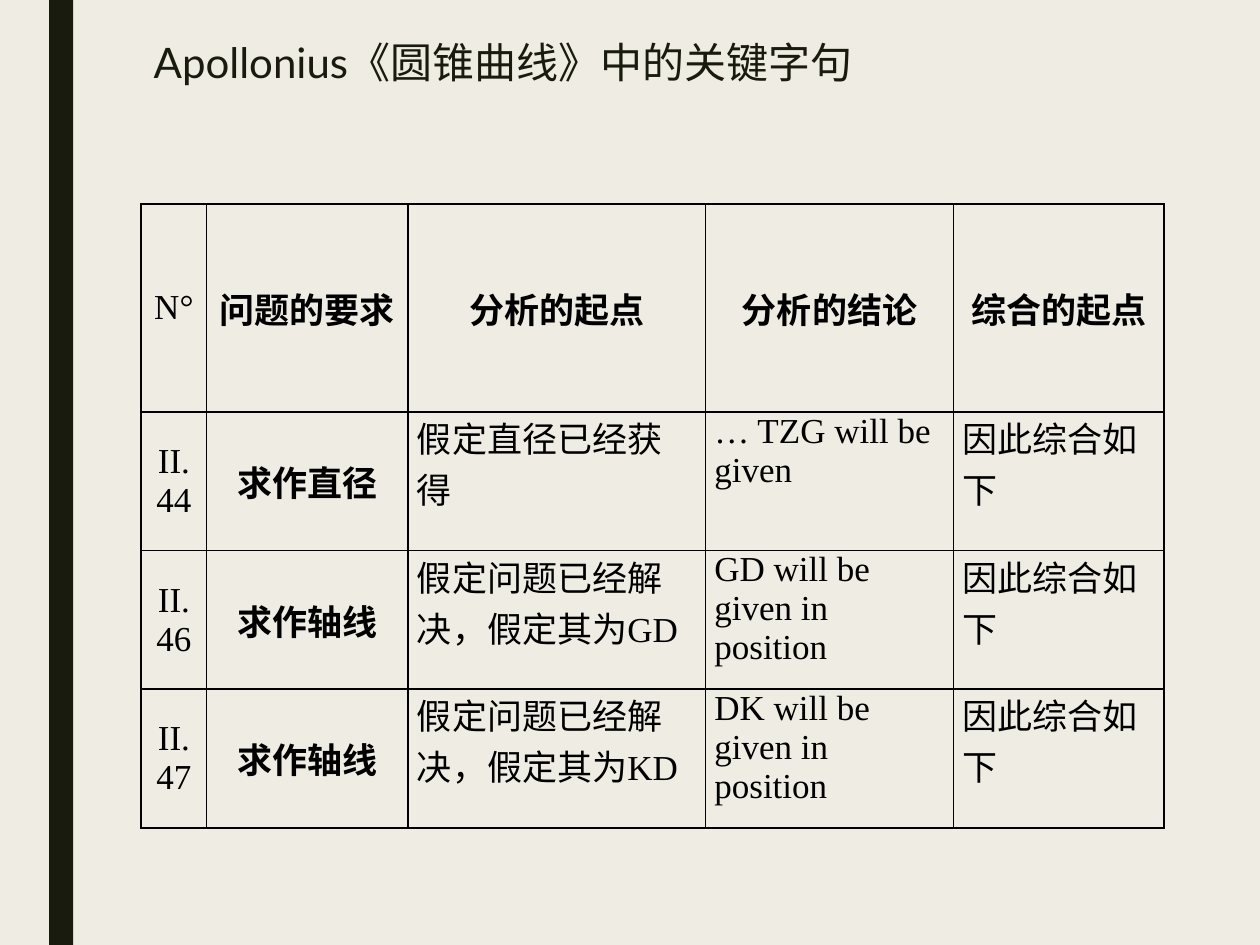
"""Build a slide tabulating key phrases from the Conics of Apollonius."""
from lxml.etree import SubElement
from pptx import Presentation
from pptx.dml.color import RGBColor
from pptx.enum.shapes import MSO_SHAPE
from pptx.enum.text import MSO_ANCHOR as Anchor, MSO_AUTO_SIZE, PP_ALIGN as Align
from pptx.oxml.ns import qn
from pptx.util import Inches, Pt

CREAM = RGBColor(0xEF, 0xED, 0xE3)
DARK = RGBColor(0x19, 0x1B, 0x0E)
BLACK = RGBColor(0, 0, 0)
HAN_FONT = "Noto Sans CJK SC"
SERIF = "Times New Roman"


def add_run(para, text, size, font, color, bold=False):
    span = para.add_run()
    span.text = text
    span.font.size = Pt(size)
    span.font.name = font
    span.font.bold = bold
    span.font.color.rgb = color
    SubElement(span.font._element, qn("a:ea"), typeface=HAN_FONT)


def add_borders(cell):
    properties = cell._tc.get_or_add_tcPr()
    for side in ("lnL", "lnR", "lnT", "lnB"):
        line = SubElement(properties, qn(f"a:{side}"), w=str(Pt(1)))
        fill = SubElement(line, qn("a:solidFill"))
        SubElement(fill, qn("a:srgbClr"), val=str(BLACK))


deck = Presentation()
deck.slide_width = Inches(10)
deck.slide_height = Inches(7.5)
page = deck.slides.add_slide(deck.slide_layouts[5])
page.background.fill.solid()
page.background.fill.fore_color.rgb = CREAM

stripe = page.shapes.add_shape(
    MSO_SHAPE.RECTANGLE, Inches(0.39), 0, Inches(0.19), deck.slide_height)
stripe.shadow.inherit = False
stripe.fill.solid()
stripe.fill.fore_color.rgb = DARK
stripe.line.fill.background()

title = page.shapes.title
title.left, title.top = Inches(1.12), Inches(0.29)
title.width, title.height = Inches(7.88), Inches(0.94)
title.text_frame.word_wrap = True
title.text_frame.auto_size = MSO_AUTO_SIZE.NONE
title.text_frame.vertical_anchor = Anchor.TOP
heading = title.text_frame.paragraphs[0]
heading.alignment = Align.LEFT
heading.line_spacing = 0.89
add_run(heading, "Apollonius《圆锥曲线》中的关键字句", 24, "Lato", DARK)

rows = [
    ("N°", "问题的要求", "分析的起点", "分析的结论", "综合的起点"),
    ("II.44", "求作直径", "假定直径已经获得", "… TZG will be given", "因此综合如下"),
    ("II.46", "求作轴线", "假定问题已经解决，假定其为GD",
     "GD will be given in position", "因此综合如下"),
    ("II.47", "求作轴线", "假定问题已经解决，假定其为KD",
     "DK will be given in position", "因此综合如下"),
]
widths = [0.52, 1.6, 2.36, 1.97, 1.67]
heights = [1.65, 1.1, 1.1, 1.1]

table = page.shapes.add_table(
    len(rows), len(widths), Inches(1.12), Inches(1.62),
    Inches(sum(widths)), Inches(sum(heights))).table
table.first_row = False
table.horz_banding = False
for column, width in zip(table.columns, widths):
    column.width = Inches(width)

for row_index, texts in enumerate(rows):
    table.rows[row_index].height = Inches(heights[row_index])
    for column_index, text in enumerate(texts):
        cell = table.cell(row_index, column_index)
        centred = row_index == 0 or column_index < 2
        bold = column_index == 1 or (row_index == 0 and column_index > 0)
        han_only = column_index == 1 or (row_index > 0 and column_index == 4)
        cell.margin_left = cell.margin_right = Inches(0.07)
        cell.margin_top = cell.margin_bottom = 0
        cell.vertical_anchor = Anchor.MIDDLE if centred else Anchor.TOP
        add_borders(cell)
        cell.fill.background()
        para = cell.text_frame.paragraphs[0]
        para.alignment = Align.CENTER if centred else Align.LEFT
        if column_index > 1:
            para.space_after = Pt(6)
        add_run(para, text, 20, HAN_FONT if han_only else SERIF, BLACK, bold)

deck.save("out.pptx")
